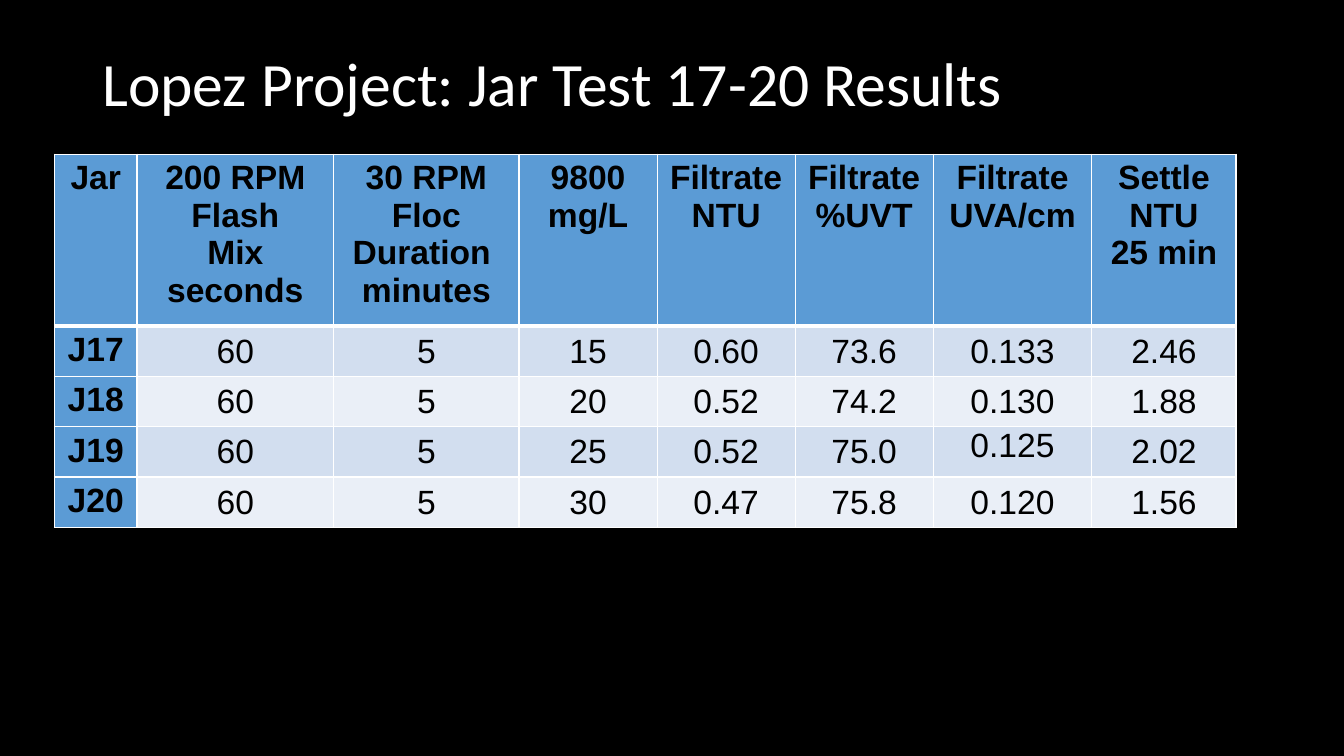
"""Build the jar test results slide."""
from dataclasses import dataclass

from pptx import Presentation, table as tb
from pptx.dml import color
from pptx.enum import text as et
from pptx.oxml import ns, xmlchemy
from pptx.text import text as tt
from pptx.util import Pt

COLORS = {
    "background": "000000",
    "title": "FFFFFF",
    "ink": "000000",
    "border": "FFFFFF",
    "heading": "5B9BD5",
    "odd": "D2DEEF",
    "even": "EAEFF7",
}
TITLE_FONT = {"name": "Calibri", "size": Pt(44), "bold": False}
HEADING_FONT = {"name": "Arial", "size": Pt(24), "bold": True}
READING_FONT = {**HEADING_FONT, "bold": False}
HEADING_CELL = {"vertical_anchor": et.MSO_ANCHOR.TOP}
READING_CELL = {
    "vertical_anchor": et.MSO_ANCHOR.MIDDLE,
    "margin_left": Pt(0.72),
    "margin_right": Pt(0.72),
    "margin_top": Pt(0.72),
    "margin_bottom": Pt(0),
}
TOP_READING_CELL = {**READING_CELL, "vertical_anchor": et.MSO_ANCHOR.TOP}
TITLE_FRAME = {"word_wrap": True, "vertical_anchor": et.MSO_ANCHOR.MIDDLE}
HEADER_HEIGHT, JAR_HEIGHT = 114.3, 34.1


@dataclass(frozen=True)
class Measure:
    """A table column with its heading, width and one reading per jar."""
    heading: str
    width: float
    readings: tuple[str, ...]


MEASURES = (
    Measure("Jar", 59, ("J17", "J18", "J19", "J20")),
    Measure("200 RPM\nFlash\nMix\nseconds", 140.4, ("60",) * 4),
    Measure("30 RPM\nFloc\nDuration \nminutes", 132.5, ("5",) * 4),
    Measure("9800\nmg/L", 98.6, ("15", "20", "25", "30")),
    Measure("Filtrate\nNTU", 98.6, ("0.60", "0.52", "0.52", "0.47")),
    Measure("Filtrate\n%UVT", 98.6, ("73.6", "74.2", "75.0", "75.8")),
    Measure("Filtrate\nUVA/cm", 113.4, ("0.133", "0.130", "0.125", "0.120")),
    Measure("Settle\nNTU\n25 min", 103, ("2.46", "1.88", "2.02", "1.56")),
)


def rgb(part: str) -> color.RGBColor:
    """Return the colour of a part of the slide."""
    return color.RGBColor.from_string(COLORS[part])


def apply_format(target: object, values: dict[str, object]) -> None:
    """Set every format value on the target."""
    for attribute, value in values.items():
        setattr(target, attribute, value)


def style_run(run: tt._Run, font: dict[str, object], part: str) -> None:
    """Give a run its font and colour."""
    apply_format(run.font, font)
    run.font.color.rgb = rgb(part)


def draw_borders(cell: tb._Cell, widths: dict[str, float]) -> None:
    """Draw the border of each named side in its width."""
    properties = cell._tc.get_or_add_tcPr()
    for side, width in widths.items():
        line = xmlchemy.OxmlElement(f"a:ln{side}")
        line.set("w", str(Pt(width)))
        fill = xmlchemy.OxmlElement("a:solidFill")
        shade = xmlchemy.OxmlElement("a:srgbClr")
        shade.set("val", COLORS["border"])
        fill.append(shade)
        line.append(fill)
        properties.append(line)


def fill_cell(cell: tb._Cell, wording: str, part: str,
              font: dict[str, object], layout: dict[str, object],
              borders: dict[str, float]) -> None:
    """Write and style one table cell."""
    cell.text = wording
    apply_format(cell, layout)
    draw_borders(cell, borders)
    cell.fill.solid()
    cell.fill.fore_color.rgb = rgb(part)
    for paragraph in cell.text_frame.paragraphs:
        paragraph.alignment = et.PP_ALIGN.CENTER
        for run in paragraph.runs:
            style_run(run, font, "ink")


def add_title(slide: object, wording: str) -> None:
    """Add the slide title."""
    frame = slide.shapes.add_textbox(Pt(66), Pt(9.4), Pt(828), Pt(104.4)).text_frame
    apply_format(frame, TITLE_FRAME)
    paragraph = frame.paragraphs[0]
    paragraph.line_spacing = 0.9
    run = paragraph.add_run()
    run.text = wording
    style_run(run, TITLE_FONT, "title")


def add_results(slide: object) -> None:
    """Add the table of jar test results."""
    jar_count = len(MEASURES[0].readings)
    results = slide.shapes.add_table(
        jar_count + 1, len(MEASURES), Pt(38.9), Pt(110.2),
        Pt(sum(measure.width for measure in MEASURES)),
        Pt(HEADER_HEIGHT + jar_count * JAR_HEIGHT)).table
    for index, row in enumerate(results.rows):
        row.height = Pt(JAR_HEIGHT if index else HEADER_HEIGHT)
    for column, measure in enumerate(MEASURES):
        results.columns[column].width = Pt(measure.width)
        for row, wording in enumerate((measure.heading, *measure.readings)):
            is_heading = row == 0 or column == 0
            part = "heading" if is_heading else "odd" if row % 2 else "even"
            font = HEADING_FONT if is_heading else READING_FONT
            layout = HEADING_CELL if is_heading else READING_CELL
            if wording == "0.125":
                layout = TOP_READING_CELL
            borders = {"L": 1, "R": 1, "T": 3 if row == 1 else 1,
                       "B": 1 if row else 3}
            fill_cell(results.cell(row, column), wording, part, font, layout, borders)


def main() -> None:
    """Build and save the presentation."""
    deck = Presentation()
    apply_format(deck, {"slide_width": Pt(960), "slide_height": Pt(540)})
    slide = deck.slides.add_slide(deck.slide_layouts[6])
    slide.background.fill.solid()
    slide.background.fill.fore_color.rgb = rgb("background")
    add_title(slide, "Lopez Project: Jar Test 17-20 Results")
    add_results(slide)
    deck.save("out.pptx")


if __name__ == "__main__":
    main()
